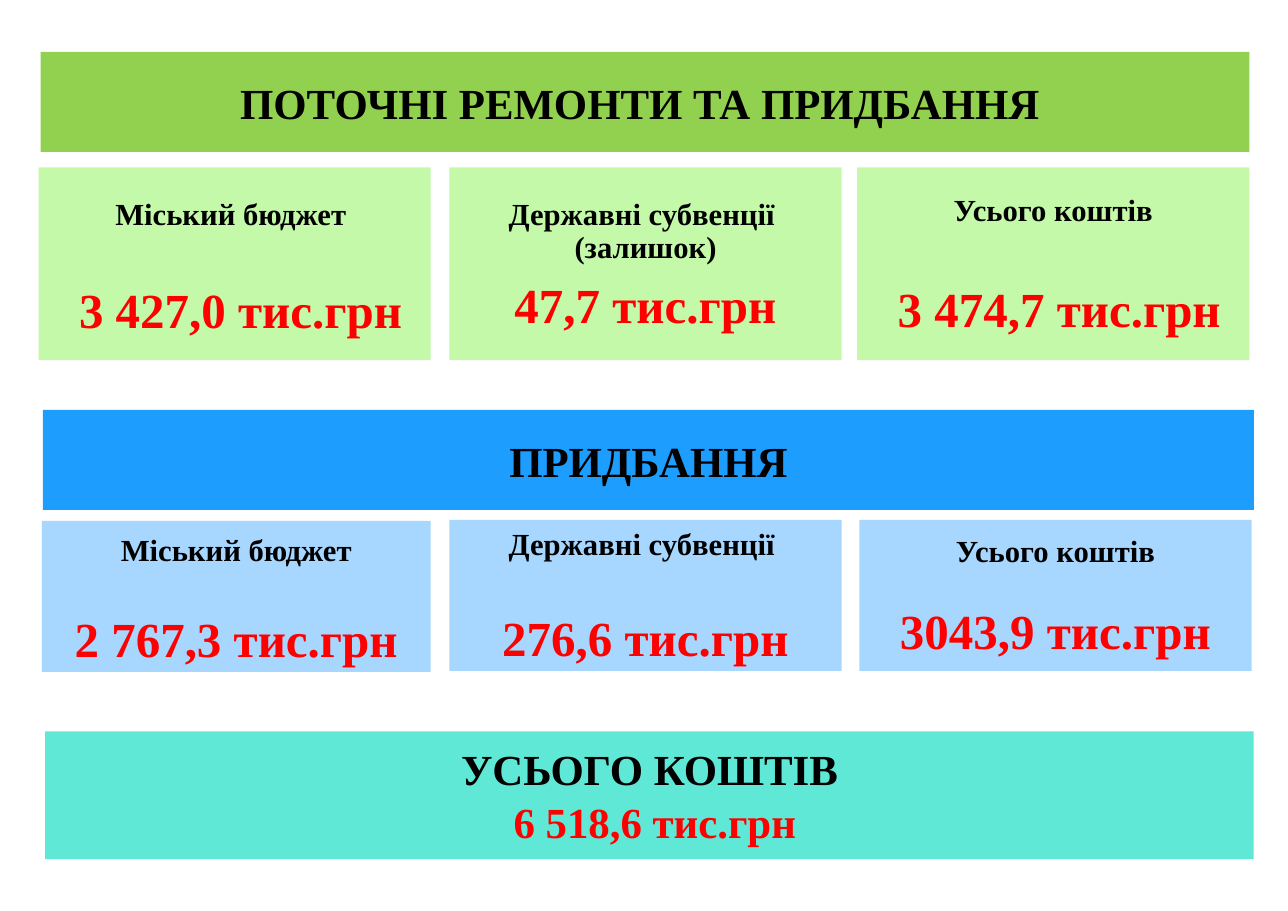
from dataclasses import dataclass

from pptx import Presentation
from pptx.dml.color import RGBColor
from pptx.enum.shapes import MSO_SHAPE
from pptx.enum.text import MSO_ANCHOR, PP_ALIGN
from pptx.slide import Slide
from pptx.util import Inches, Pt

RECTANGLE = MSO_SHAPE.RECTANGLE
MIDDLE = MSO_ANCHOR.MIDDLE
CENTER = PP_ALIGN.CENTER


@dataclass(frozen=True)
class Theme:
    font: str = "Times New Roman"
    text: str = "000000"
    amount: str = "FF0000"
    repairs_banner: str = "92D050"
    repairs_card: str = "C4F9A9"
    purchases_banner: str = "1D9EFF"
    purchases_card: str = "A7D6FF"
    total_banner: str = "5FE8D6"
    banner_size: int = 28
    label_size: int = 20
    amount_size: int = 32


THEME = Theme()


@dataclass(frozen=True)
class Line:
    text: str
    size: int
    color: str = THEME.text
    gap: float = 0
    spacing: float = 1


@dataclass(frozen=True)
class Card:
    label: str
    amount: str
    left: float
    gap: float
    top_shift: float = 0
    width: float = 3.56
    spacing: float = 0.9


@dataclass(frozen=True)
class Section:
    title: str
    banner_left: float
    banner_top: float
    banner_width: float
    banner_color: str
    card_color: str
    card_top: float
    card_height: float
    cards: tuple[Card, ...]


SECTIONS = (
    Section(
        "ПОТОЧНІ РЕМОНТИ ТА ПРИДБАННЯ ", 0.37, 0.47, 10.97,
        THEME.repairs_banner, THEME.repairs_card, 1.52, 1.75,
        (
            Card("Міський бюджет ", " 3 427,0 тис.грн", 0.35, 31, spacing=1),
            Card("Державні субвенції \v(залишок)", "47,7 тис.грн", 4.08, 11),
            Card("Усього коштів", " 3 474,7 тис.грн", 7.78, 37.5),
        ),
    ),
    Section(
        "ПРИДБАННЯ", 0.39, 3.72, 10.99,
        THEME.purchases_banner, THEME.purchases_card, 4.72, 1.37,
        (
            Card("Міський бюджет", "2 767,3 тис.грн", 0.38, 27, 0.01, 3.53, 1),
            Card("Державні субвенції ", "276,6 тис.грн", 4.08, 34),
            Card("Усього коштів", "3043,9 тис.грн", 7.8, 24.5),
        ),
    ),
)


def add_panel(
    slide: Slide, left: float, top: float, width: float, height: float,
    color: str, lines: list[Line], margin_top: float = 0.05,
) -> None:
    shape = slide.shapes.add_shape(
        RECTANGLE, Inches(left), Inches(top), Inches(width), Inches(height)
    )
    shape.shadow.inherit = False
    shape.fill.solid()
    shape.fill.fore_color.rgb = RGBColor.from_string(color)
    shape.line.fill.background()
    frame = shape.text_frame
    frame.word_wrap = True
    frame.vertical_anchor = MIDDLE
    frame.margin_top = Inches(margin_top)
    for index, line in enumerate(lines):
        paragraph = frame.add_paragraph() if index else frame.paragraphs[0]
        paragraph.text = line.text
        paragraph.alignment = CENTER
        paragraph.line_spacing = line.spacing
        if line.gap:
            paragraph.space_before = Pt(line.gap)
        paragraph.font.name = THEME.font
        paragraph.font.size = Pt(line.size)
        paragraph.font.bold = True
        paragraph.font.color.rgb = RGBColor.from_string(line.color)


def add_section(slide: Slide, section: Section) -> None:
    add_panel(
        slide, section.banner_left, section.banner_top, section.banner_width, 0.91,
        section.banner_color, [Line(section.title, THEME.banner_size)],
    )
    for card in section.cards:
        lines = [
            Line(card.label, THEME.label_size, spacing=card.spacing),
            Line(card.amount, THEME.amount_size, THEME.amount, card.gap, card.spacing),
        ]
        add_panel(
            slide, card.left, section.card_top + card.top_shift, card.width,
            section.card_height, section.card_color, lines, margin_top=0.1,
        )


def main() -> None:
    presentation = Presentation()
    presentation.slide_width = Inches(11.69)
    presentation.slide_height = Inches(8.27)
    slide = presentation.slides.add_slide(presentation.slide_layouts[6])
    for section in SECTIONS:
        add_section(slide, section)
    total_lines = [
        Line("УСЬОГО КОШТІВ", THEME.banner_size),
        Line(" 6 518,6 тис.грн", THEME.banner_size, THEME.amount, gap=1),
    ]
    add_panel(slide, 0.41, 6.64, 10.97, 1.16, THEME.total_banner, total_lines)
    presentation.save("out.pptx")


if __name__ == "__main__":
    main()
